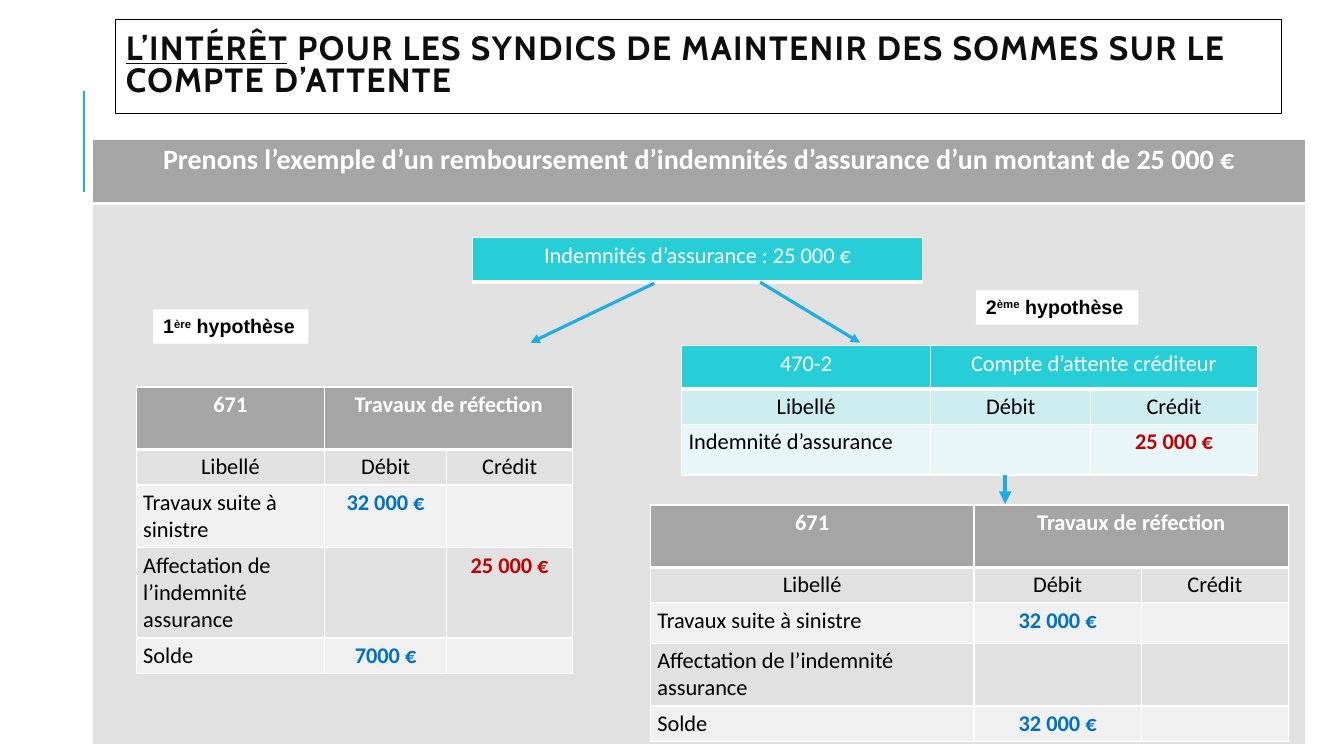
from lxml import etree
from pptx import Presentation
from pptx.dml.color import RGBColor
from pptx.enum.shapes import MSO_CONNECTOR as Connector, MSO_SHAPE as Shape
from pptx.enum.text import MSO_ANCHOR as Anchor, PP_ALIGN as Align
from pptx.oxml.ns import qn
from pptx.util import Inches, Pt

COLORS = {
    "white": "FFFFFF", "black": "000000", "title": "0D0D0D", "accent": "1CADE4",
    "gray": "A5A5A5", "gray_dark": "E1E1E1", "gray_light": "F0F0F0",
    "teal": "27CED7", "teal_dark": "CDEDF0", "teal_light": "E8F6F8",
    "debit": "0070C0", "credit": "C00000",
}
GRAY = ("gray", "gray_dark", "gray_light")
TEAL = ("teal", "teal_dark", "teal_light")
COLUMN_TITLES = ["Libellé", "Débit", "Crédit"]


def rgb(name):
    return RGBColor.from_string(COLORS[name])


class SlideBuilder:
    def __init__(self, slide):
        self.slide = slide

    def add_run(self, paragraph, text, size, color, font="Calibri", bold=False):
        run = paragraph.add_run()
        run.text = text
        run.font.name = font
        run.font.size = Pt(size)
        run.font.bold = bold
        run.font.color.rgb = rgb(color)
        return run

    def box(self, left, top, width, height, fill=None, line=None):
        shape = self.slide.shapes.add_shape(
            Shape.RECTANGLE, Inches(left), Inches(top), Inches(width), Inches(height))
        shape.shadow.inherit = False
        if fill:
            shape.fill.solid()
            shape.fill.fore_color.rgb = rgb(fill)
        else:
            shape.fill.background()
        if line:
            shape.line.color.rgb = rgb(line)
            shape.line.width = Pt(0.75)
        else:
            shape.line.fill.background()
        shape.text_frame.word_wrap = True
        paragraph = shape.text_frame.paragraphs[0]
        paragraph.alignment = Align.LEFT
        return shape, paragraph

    def title(self, underlined, rest):
        shape, paragraph = self.box(1.15, 0.19, 11.56, 0.94, line="black")
        shape.text_frame.vertical_anchor = Anchor.MIDDLE
        paragraph.line_spacing = 0.8
        for text, underline in ((underlined, True), (rest, False)):
            run = self.add_run(paragraph, text, 24, "title", "Cabin", True)
            run.font.underline = underline
            run.font._element.set("spc", "100")

    def hypothesis(self, left, top, width, number, ordinal):
        shape, paragraph = self.box(left, top, width, 0.34, fill="white")
        shape.text_frame.vertical_anchor = Anchor.TOP
        for text, raised in ((number, False), (ordinal, True), (" hypothèse", False)):
            run = self.add_run(paragraph, text, 14, "black", "Arial", True)
            if raised:
                run.font._element.set("baseline", "30000")

    def line(self, start, end, width, arrow=True):
        connector = self.slide.shapes.add_connector(
            Connector.STRAIGHT, *(Inches(value) for value in start + end))
        connector.line.color.rgb = rgb("accent")
        connector.line.width = Pt(width)
        if arrow:
            etree.SubElement(connector.line._get_or_add_ln(), qn("a:tailEnd"), type="triangle")
        etree.SubElement(connector._element.spPr, qn("a:effectLst"))

    def borders(self, cell, top, bottom):
        properties = cell._tc.get_or_add_tcPr()
        for side, width in (("L", 1), ("R", 1), ("T", top), ("B", bottom)):
            line = etree.SubElement(properties, qn(f"a:ln{side}"), w=str(Pt(width)))
            fill = etree.SubElement(line, qn("a:solidFill"))
            etree.SubElement(fill, qn("a:srgbClr"), val=COLORS["white"])

    def table(self, left, top, widths, heights, rows, palette,
              size=16, bold_header=True, header_rule=3):
        frame = self.slide.shapes.add_table(
            len(heights), len(widths), Inches(left), Inches(top),
            Inches(sum(widths)), Inches(sum(heights)))
        table = frame.table
        table.first_row = table.horz_banding = False
        for column, width in zip(table.columns, widths):
            column.width = Inches(width)
        for row, height in zip(table.rows, heights):
            row.height = Inches(height)
        if len(widths) == 3:
            table.cell(0, 1).merge(table.cell(0, 2))
        header, *bands = palette
        for i, texts in enumerate(rows):
            for j, text in enumerate(texts):
                cell = table.cell(i, j)
                cell.margin_left = cell.margin_right = Inches(0.07)
                cell.margin_top = cell.margin_bottom = Inches(0.04)
                self.borders(cell, header_rule if i == 1 else 1, 3 if i == 0 else 1)
                cell.fill.solid()
                cell.fill.fore_color.rgb = rgb(bands[(i - 1) % 2] if i else header)
                paragraph = cell.text_frame.paragraphs[0]
                paragraph.alignment = Align.CENTER if i < 2 or j else Align.LEFT
                amount = i > 1 and j > 0
                color = ("black", "debit", "credit")[j] if amount else "black"
                if text:
                    self.add_run(paragraph, text, size, color if i else "white",
                                 bold=amount or (i == 0 and bold_header))
                else:
                    etree.SubElement(paragraph._p, qn("a:endParaRPr"), sz=str(size * 100))

    def repair_account(self, left, top, widths, heights, credit, balance):
        self.table(left, top, widths, heights, [
            ["671", "Travaux de réfection", ""],
            COLUMN_TITLES,
            ["Travaux suite à sinistre", "32 000 €", ""],
            ["Affectation de l’indemnité assurance", "", credit],
            ["Solde", balance, ""],
        ], GRAY)


def main():
    presentation = Presentation()
    presentation.slide_width = Inches(13.33)
    presentation.slide_height = Inches(7.5)
    builder = SlideBuilder(presentation.slides.add_slide(presentation.slide_layouts[6]))

    builder.line((0.83, 1.9), (0.83, 0.9), 1.5, arrow=False)
    builder.title("L’INTÉRÊT",
                  " POUR LES SYNDICS DE MAINTENIR DES SOMMES SUR LE COMPTE D’ATTENTE")
    builder.table(0.92, 1.38, [12.03], [0.64, 5.37], [
        ["Prenons l’exemple d’un remboursement d’indemnités d’assurance"
         " d’un montant de 25 000 €"],
        [""],
    ], GRAY, size=20)
    builder.table(4.69, 2.36, [4.46], [0.44], [["Indemnités d’assurance : 25 000 €"]],
                  TEAL, bold_header=False)
    builder.table(6.76, 3.43, [2.47, 1.59, 1.65], [0.43, 0.35, 0.5], [
        ["470-2", "Compte d’attente créditeur", ""],
        COLUMN_TITLES,
        ["Indemnité d’assurance", "", "25 000 €"],
    ], TEAL, bold_header=False, header_rule=1)
    builder.repair_account(1.35, 3.84, [1.87, 1.21, 1.25],
                           [0.62, 0.35, 0.62, 0.89, 0.35], "25 000 €", "7000 €")
    builder.line((6.49, 2.81), (5.26, 3.4), 2.25)
    builder.line((7.54, 2.8), (8.53, 3.4), 2.25)
    builder.repair_account(6.45, 5.01, [3.21, 1.66, 1.46],
                           [0.62, 0.35, 0.4, 0.62, 0.35], "", "32 000 €")
    builder.hypothesis(1.52, 3.07, 1.54, "1", "ère")
    builder.hypothesis(9.68, 2.88, 1.61, "2", "ème")
    builder.line((9.97, 4.71), (9.97, 5), 3)
    presentation.save("out.pptx")


if __name__ == "__main__":
    main()
